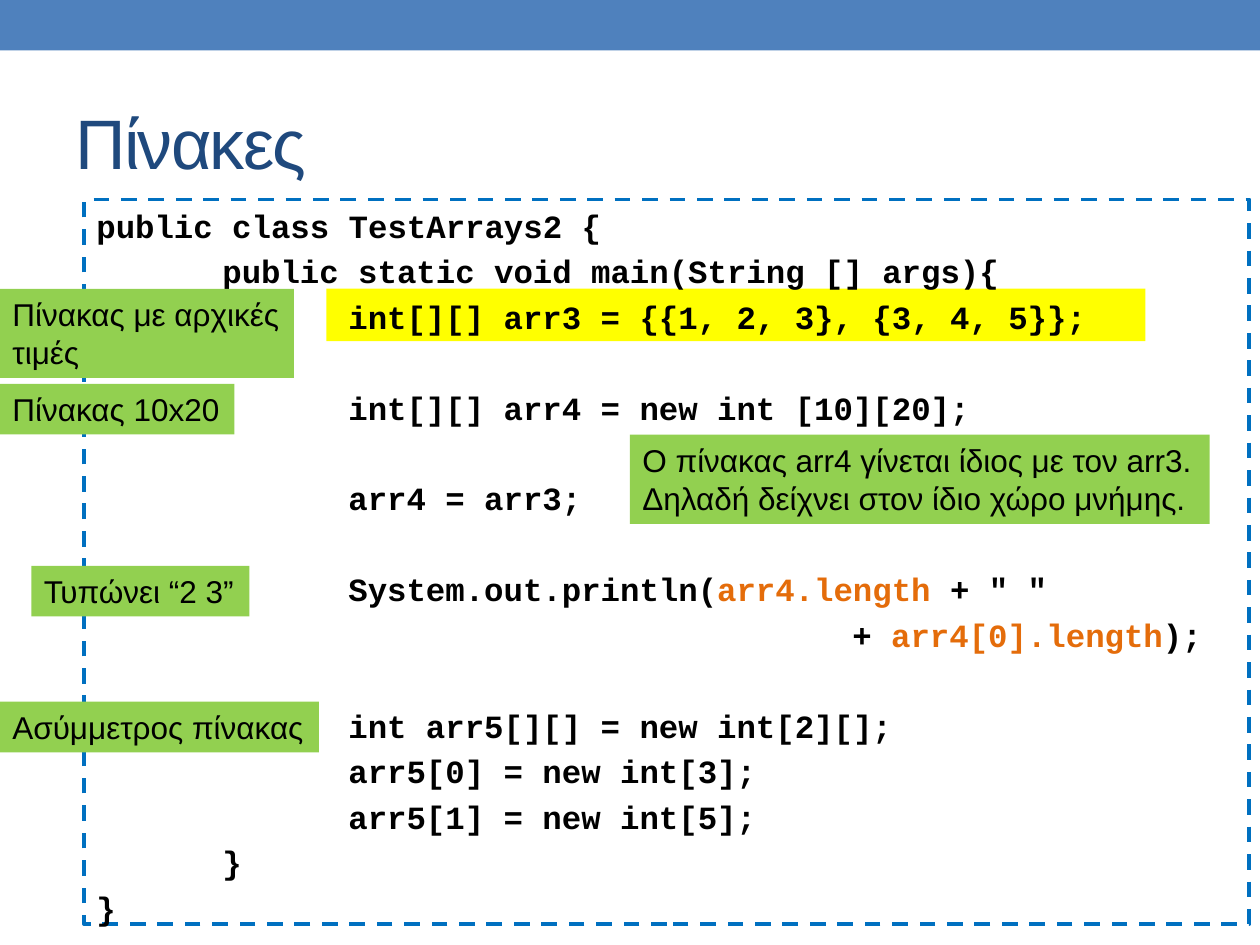
"""Build the slide on two-dimensional Java arrays with its side notes."""
from pptx import Presentation
from pptx.dml.color import RGBColor
from pptx.enum import dml, shapes, text
from pptx.util import Pt

BLACK, GREEN, ORANGE = "000000", "92D050", "E46C0A"
TOP, LEAD, ROW, TAB = 5.6, 3.8, 22.1, 72

BLOCKS = [
    [(0, "public class TestArrays2 {"),
     (1, "public static void main(String [] args){"),
     (2, "int[][] arr3 = {{1, 2, 3}, {3, 4, 5}};")],
    [(2, "int[][] arr4 = new int [10][20];")],
    [(2, "arr4 = arr3;")],
    [(2, ["System.out.println(", ("arr4.length ", ORANGE), "+ \" \""]),
     (6, ["+ ", ("arr4[0].length", ORANGE), ");"])],
    [(2, "int arr5[][] = new int[2][];"),
     (2, "arr5[0] = new int[3];"),
     (2, "arr5[1] = new int[5];"),
     (1, "}"),
     (0, "}")],
]
NOTES = [
    ((18, 323.3, 124.5, 29), ["Τυπώνει “2 3”"], False),
    ((0, 401, 182.2, 29), ["Ασύμμετρος πίνακας"], False),
    ((0, 165, 168, 51), ["Πίνακας με αρχικές τιμές"], True),
    ((0, 219.3, 134, 29), ["Πίνακας 10x20"], False),
    ((360, 248.4, 331.2, 51), ["O πίνακας arr4 γίνεται ίδιος με τον arr3.",
                               "Δηλαδή δείχνει στον ίδιο χώρο μνήμης."], False),
]


def tint(code):
    """Turn a hex string into a colour."""
    return RGBColor.from_string(code)


def rect(slide, box, fill=None, line=None):
    """Draw a plain rectangle with an optional fill and dashed line."""
    shape = slide.shapes.add_shape(
        shapes.MSO_SHAPE.RECTANGLE, *[Pt(v) for v in box])
    shape.shadow.inherit = False
    if fill:
        shape.fill.solid()
        shape.fill.fore_color.rgb = tint(fill)
    else:
        shape.fill.background()
    if line:
        shape.line.color.rgb = tint(line)
        shape.line.width = Pt(2.25)
        shape.line.dash_style = dml.MSO_LINE.DASH
    else:
        shape.line.fill.background()
    return shape


def write(shape, lines, size=18, font="Arial", color=BLACK, bold=False,
          gaps=None, depths=None, wrap=True, grow=False, anchor="TOP", track=0):
    """Fill a shape with lines, each a string or a list of coloured parts."""
    frame = shape.text_frame
    frame.word_wrap = wrap
    frame.auto_size = (text.MSO_AUTO_SIZE.SHAPE_TO_FIT_TEXT if grow
                       else text.MSO_AUTO_SIZE.NONE)
    frame.vertical_anchor = text.MSO_ANCHOR[anchor]
    for i, line in enumerate(lines):
        para = frame.add_paragraph() if i else frame.paragraphs[0]
        para.alignment = text.PP_ALIGN.LEFT
        para.space_before = Pt(gaps[i] if gaps else 0)
        if depths:
            props = para._p.get_or_add_pPr()
            props.set("marL", str(Pt(TAB * depths[i])))
            props.set("indent", "0")
        for part in [line] if isinstance(line, str) else line:
            words, hue = (part, color) if isinstance(part, str) else part
            run = para.add_run()
            run.text = words
            run.font.size = Pt(size)
            run.font.name = font
            run.font.bold = bold
            run.font.color.rgb = tint(hue)
            if track:
                run.font._element.set("spc", str(track * 100))


def main():
    """Lay out the bar, code, title and notes."""
    deck = Presentation()
    deck.slide_width, deck.slide_height = Pt(720), Pt(540)
    slide = deck.slides.add_slide(deck.slide_layouts[6])

    rect(slide, (0, 0, 720, 28.8), "4F81BD")
    rect(slide, (186.5, 165, 468, 30), "FFFF00")

    depths, code = zip(*[row for block in BLOCKS for row in block])
    gaps = [LEAD if i else 2 * LEAD + ROW
            for block in BLOCKS for i in range(len(block))]
    gaps[0] = TOP
    panel = rect(slide, (48, 114, 666, 414), line="0070C0")
    write(panel, code, size=18.5, font="Courier New", bold=True,
          gaps=gaps, depths=depths)

    title = slide.shapes.add_textbox(Pt(36), Pt(42), Pt(648), Pt(78))
    write(title, ["Πίνακες"], size=40, color="1F497D", anchor="MIDDLE", track=-1)

    for box, lines, wrap in NOTES:
        write(rect(slide, box, GREEN), lines, wrap=wrap, grow=True)

    deck.save("out.pptx")


if __name__ == "__main__":
    main()
